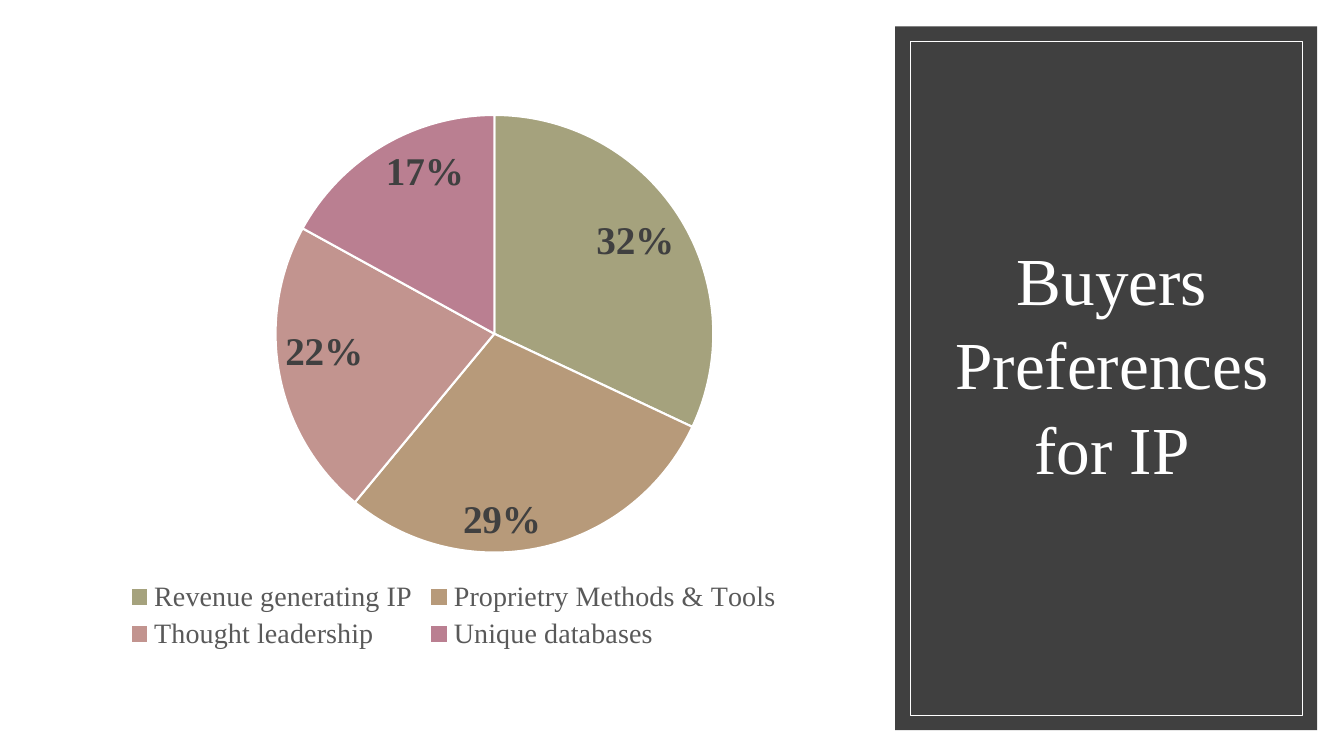
import pptx
import pptx.chart.data
import pptx.dml.color
import pptx.enum.chart
import pptx.enum.shapes
import pptx.enum.text
import pptx.util
from lxml import etree
from pptx.oxml.ns import qn

WIDTH, HEIGHT = 13.33, 7.5
FONT = "Times New Roman"
COLOURS = {"panel": "404040", "white": "FFFFFF", "legend": "595959", "label": "404040"}
PREFERENCES = {
    "Revenue generating IP": (0.32, "A5A27D"),
    "Proprietry Methods & Tools": (0.29, "B79A7A"),
    "Thought leadership": (0.22, "C2948F"),
    "Unique databases": (0.17, "BA7F91"),
}
# Left, top, width and height as shares of the slide
CHART_BOX = (0.056, 0.09, 0.563, 0.777)
PANEL_BOX = (0.666, 0.035, 0.314, 0.931)
# Shares of the chart's box
PIE_AREA = {"x": 0.264, "y": 0.08, "w": 0.58, "h": 0.745}


def rgb(colour):
    return pptx.dml.color.RGBColor.from_string(colour)


def slide_box(shares):
    """Turn shares of the slide into lengths in inches."""
    return [share * side for share, side in zip(shares, (WIDTH, HEIGHT) * 2)]


def emu(box):
    return [pptx.util.Inches(length) for length in box]


def format_font(font, size, colour, bold=False):
    values = {"name": FONT, "size": pptx.util.Pt(size), "bold": bold}
    for name, value in values.items():
        setattr(font, name, value)
    font.color.rgb = rgb(colour)


def add_rectangle(page, box):
    rectangle = page.shapes.add_shape(pptx.enum.shapes.MSO_SHAPE.RECTANGLE, *emu(box))
    rectangle.shadow.inherit = False
    return rectangle


def add_title_panel(page, box, wording):
    left, top, width, height = box
    panel = add_rectangle(page, box)
    panel.fill.solid()
    panel.fill.fore_color.rgb = rgb(COLOURS["panel"])
    panel.line.fill.background()

    inset = 0.15
    frame = add_rectangle(page, (left + inset, top + inset, width - 2 * inset, height - 2 * inset))
    frame.fill.background()
    frame.line.color.rgb = rgb(COLOURS["white"])
    frame.line.width = pptx.util.Pt(0.5)

    title = page.shapes.title
    frame._element.addnext(title._element)
    title_box = emu((left + 0.1 * width, top + 0.405 * height, 0.828 * width, 0.258 * height))
    for name, value in zip(("left", "top", "width", "height"), title_box):
        setattr(title, name, value)
    title.text_frame.text = wording
    settings = {
        "vertical_anchor": pptx.enum.text.MSO_ANCHOR.BOTTOM,
        "word_wrap": True,
        "auto_size": pptx.enum.text.MSO_AUTO_SIZE.NONE,
    }
    for name, value in settings.items():
        setattr(title.text_frame, name, value)
    para = title.text_frame.paragraphs[0]
    para.alignment = pptx.enum.text.PP_ALIGN.CENTER
    para.line_spacing = 1.05
    format_font(para.runs[0].font, 48, COLOURS["white"])


def place_plot(chart, area):
    """Fix the plot's inner area, given as shares of the chart."""
    plot_area = chart._chartSpace.chart.plotArea
    for old in plot_area.findall(qn("c:layout")):
        plot_area.remove(old)
    layout = etree.Element(qn("c:layout"))
    manual = etree.SubElement(layout, qn("c:manualLayout"))
    settings = {"layoutTarget": "inner", "xMode": "edge", "yMode": "edge", **area}
    for name, value in settings.items():
        etree.SubElement(manual, qn(f"c:{name}")).set("val", str(value))
    plot_area.insert(0, layout)


def add_preference_pie(page, box):
    chart_data = pptx.chart.data.CategoryChartData(number_format="0%")
    chart_data.categories = list(PREFERENCES)
    chart_data.add_series("Series 1", [share for share, _ in PREFERENCES.values()])
    chart = page.shapes.add_chart(
        pptx.enum.chart.XL_CHART_TYPE.PIE, *emu(box), chart_data
    ).chart
    chart.has_title = False
    format_font(chart.font, 20, "000000")
    place_plot(chart, PIE_AREA)

    chart.has_legend = True
    chart.legend.position = pptx.enum.chart.XL_LEGEND_POSITION.BOTTOM
    chart.legend.include_in_layout = False
    format_font(chart.legend.font, 20, COLOURS["legend"])

    plot = chart.plots[0]
    plot.vary_by_categories = True
    for index, (_, colour) in enumerate(PREFERENCES.values()):
        wedge = plot.series[0].points[index].format
        wedge.fill.solid()
        wedge.fill.fore_color.rgb = rgb(colour)
        wedge.line.color.rgb = rgb(COLOURS["white"])
        wedge.line.width = pptx.util.Pt(1.5)

    labels = plot.series[0].data_labels
    settings = {
        "show_value": True,
        "show_percentage": False,
        "number_format": "0%",
        "number_format_is_linked": False,
        "position": pptx.enum.chart.XL_LABEL_POSITION.INSIDE_END,
    }
    for name, value in settings.items():
        setattr(labels, name, value)
    format_font(labels.font, 28, COLOURS["label"], bold=True)


def main():
    deck = pptx.Presentation()
    deck.slide_width = pptx.util.Inches(WIDTH)
    deck.slide_height = pptx.util.Inches(HEIGHT)
    page = deck.slides.add_slide(deck.slide_layouts.get_by_name("Title Only"))
    add_title_panel(page, slide_box(PANEL_BOX), "Buyers Preferences for IP")
    add_preference_pie(page, slide_box(CHART_BOX))
    deck.save("out.pptx")


if __name__ == "__main__":
    main()
